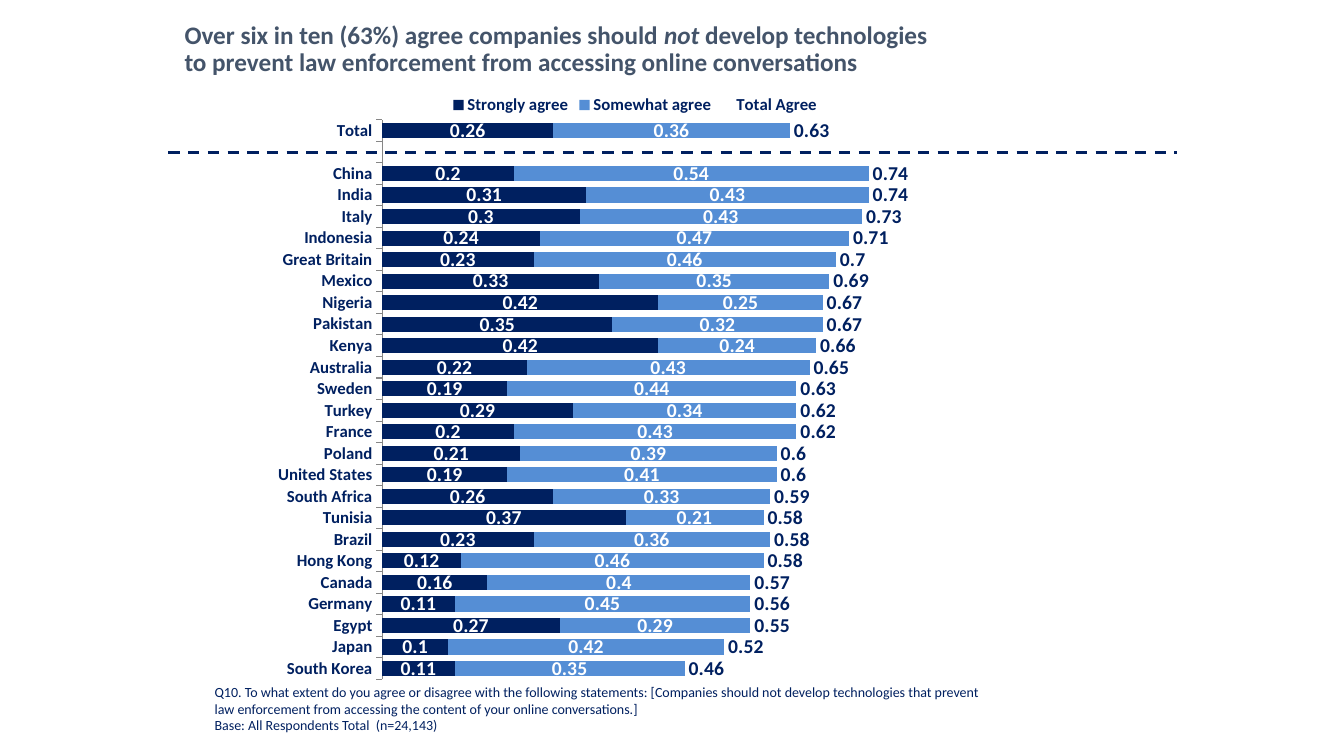
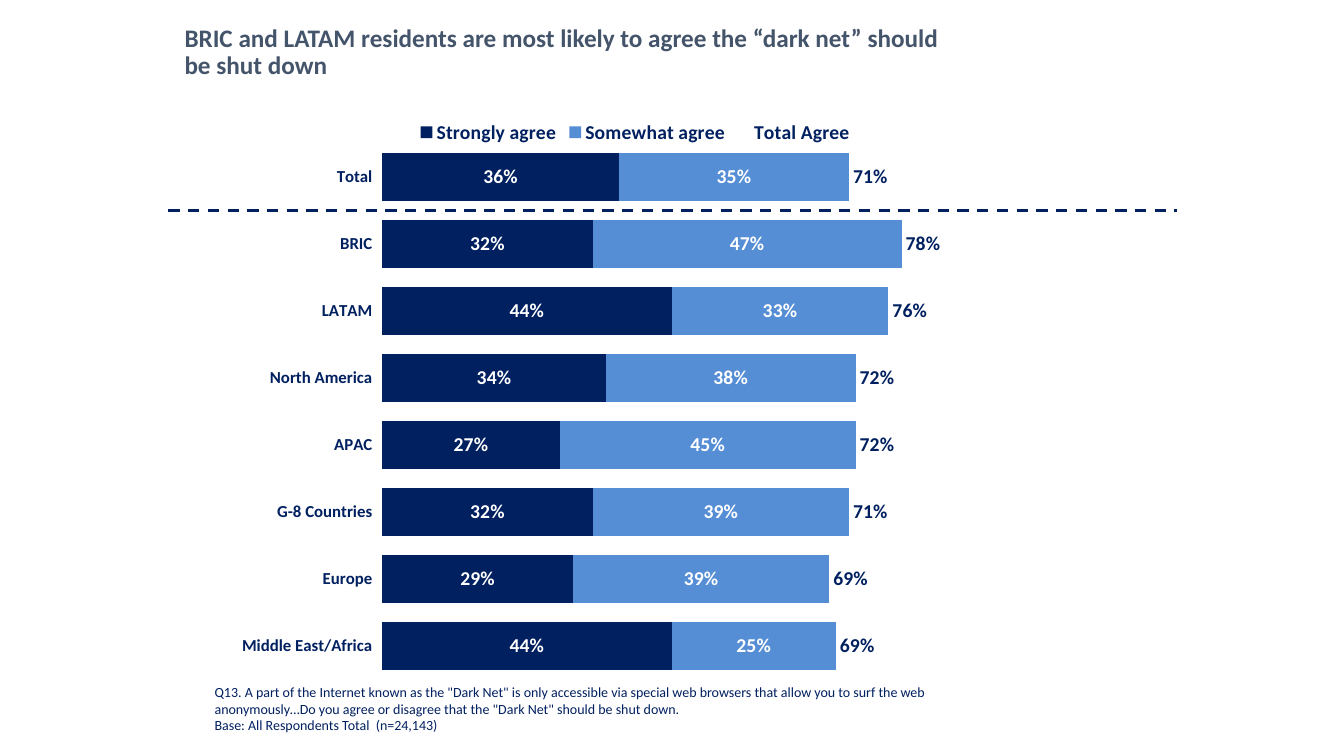
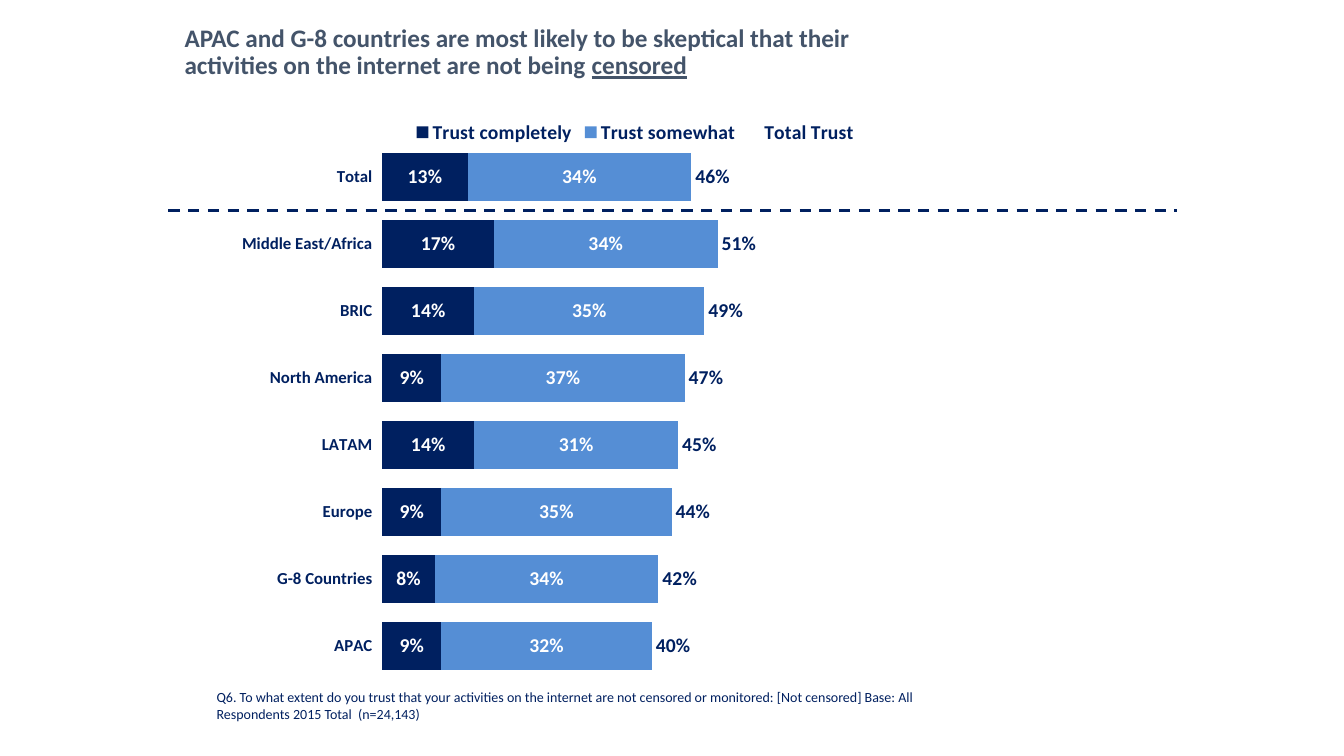
from collections import namedtuple

from lxml.etree import SubElement
from pptx import Presentation
from pptx.chart.data import CategoryChartData
from pptx.dml.color import RGBColor
from pptx.enum.chart import XL_CHART_TYPE, XL_LABEL_POSITION, XL_LEGEND_POSITION
from pptx.enum.dml import MSO_LINE
from pptx.enum.shapes import MSO_CONNECTOR
from pptx.enum.text import MSO_ANCHOR, MSO_AUTO_SIZE, PP_ALIGN
from pptx.oxml import parse_xml
from pptx.oxml.ns import nsdecls, qn
from pptx.util import Pt

Box = namedtuple("Box", "left top width height")

PX = 9144
SLIDE_WIDTH, SLIDE_HEIGHT = 1333, 750
FONT = "Calibri"
NAVY = RGBColor(0x00, 0x20, 0x60)
BLUE = RGBColor(0x55, 0x8E, 0xD5)
SLATE = RGBColor(0x44, 0x54, 0x6A)
GRAY = RGBColor(0x86, 0x86, 0x86)
WHITE = RGBColor(0xFF, 0xFF, 0xFF)
BLACK = RGBColor(0x00, 0x00, 0x00)

PLOT_AREA = {"x": 0.2, "y": 0.06, "w": 0.78, "h": 0.93}
SERIES_STYLES = [
    (NAVY, WHITE, XL_LABEL_POSITION.CENTER),
    (BLUE, WHITE, XL_LABEL_POSITION.CENTER),
    (None, NAVY, XL_LABEL_POSITION.INSIDE_BASE),
]
AGREE = ["Strongly agree", "Somewhat agree", "Total Agree"]
TRUST = ["Trust completely", "Trust somewhat", "Total Trust"]
BASE = "Base: All Respondents Total  (n=24,143)"
NOTE_BOX = Box(203, 673, 779, 61)
TITLE_BOX = Box(183, 25, 750, 55)
REGION_CHART_BOX = Box(212, 108, 836, 572)

COUNTRY_ROWS = [
    ("Total", 0.26, 0.36, 0.63),
    ("", None, None, None),
    ("China", 0.2, 0.54, 0.74),
    ("India", 0.31, 0.43, 0.74),
    ("Italy", 0.3, 0.43, 0.73),
    ("Indonesia", 0.24, 0.47, 0.71),
    ("Great Britain", 0.23, 0.46, 0.7),
    ("Mexico", 0.33, 0.35, 0.69),
    ("Nigeria", 0.42, 0.25, 0.67),
    ("Pakistan", 0.35, 0.32, 0.67),
    ("Kenya", 0.42, 0.24, 0.66),
    ("Australia", 0.22, 0.43, 0.65),
    ("Sweden", 0.19, 0.44, 0.63),
    ("Turkey", 0.29, 0.34, 0.62),
    ("France", 0.2, 0.43, 0.62),
    ("Poland", 0.21, 0.39, 0.6),
    ("United States", 0.19, 0.41, 0.6),
    ("South Africa", 0.26, 0.33, 0.59),
    ("Tunisia", 0.37, 0.21, 0.58),
    ("Brazil", 0.23, 0.36, 0.58),
    ("Hong Kong", 0.12, 0.46, 0.58),
    ("Canada", 0.16, 0.4, 0.57),
    ("Germany", 0.11, 0.45, 0.56),
    ("Egypt", 0.27, 0.29, 0.55),
    ("Japan", 0.1, 0.42, 0.52),
    ("South Korea", 0.11, 0.35, 0.46),
]
DARK_NET_ROWS = [
    ("Total", 0.36, 0.35, 0.71),
    ("BRIC", 0.32, 0.47, 0.78),
    ("LATAM", 0.44, 0.33, 0.76),
    ("North America", 0.34, 0.38, 0.72),
    ("APAC", 0.27, 0.45, 0.72),
    ("G-8 Countries", 0.32, 0.39, 0.71),
    ("Europe", 0.29, 0.39, 0.69),
    ("Middle East/Africa", 0.44, 0.25, 0.69),
]
CENSORSHIP_ROWS = [
    ("Total", 0.13, 0.34, 0.46),
    ("Middle East/Africa", 0.17, 0.34, 0.51),
    ("BRIC", 0.14, 0.35, 0.49),
    ("North America", 0.09, 0.37, 0.47),
    ("LATAM", 0.14, 0.31, 0.45),
    ("Europe", 0.09, 0.35, 0.44),
    ("G-8 Countries", 0.08, 0.34, 0.42),
    ("APAC", 0.09, 0.32, 0.4),
]


def emu(box):
    """Return the four lengths of a pixel box in EMU."""
    return [length * PX for length in box]


def format_font(font, size, color, bold=False, italic=None, underline=None):
    """Apply the deck's typeface with a size, colour and emphasis."""
    font.name = FONT
    font.size = Pt(size)
    font.color.rgb = color
    font.bold = bold
    font.italic = italic
    font.underline = underline


def write_text(paragraph, text, **text_format):
    """Append one formatted run to a paragraph."""
    run = paragraph.add_run()
    run.text = text
    format_font(run.font, **text_format)


def add_title(slide, box, parts):
    """Fill the title placeholder with text parts and their emphasis."""
    title = slide.shapes.title
    title.left, title.top, title.width, title.height = emu(box)
    frame = title.text_frame
    frame.margin_left = frame.margin_right = frame.margin_top = frame.margin_bottom = 0
    frame.vertical_anchor = MSO_ANCHOR.MIDDLE
    frame.word_wrap = True
    frame.auto_size = MSO_AUTO_SIZE.NONE
    paragraph = frame.paragraphs[0]
    paragraph.alignment = PP_ALIGN.LEFT
    paragraph.line_spacing = 0.9
    for text, emphasis in parts:
        write_text(paragraph, text, size=18, color=SLATE, bold=True, **emphasis)


def add_note(slide, box, lines):
    """Write the survey question and base under the chart."""
    frame = slide.shapes.add_textbox(*emu(box)).text_frame
    frame.word_wrap = True
    frame.auto_size = MSO_AUTO_SIZE.SHAPE_TO_FIT_TEXT
    for index, line in enumerate(lines):
        paragraph = frame.add_paragraph() if index else frame.paragraphs[0]
        write_text(paragraph, line, size=10, color=NAVY)


def add_divider(slide, box, row_count, rows_above):
    """Draw the dashed line that parts the total from the rows of a chart box."""
    share = PLOT_AREA["y"] + PLOT_AREA["h"] * rows_above / row_count
    left, top = box.left - 45, box.top + round(box.height * share)
    line = slide.shapes.add_connector(
        MSO_CONNECTOR.STRAIGHT, *emu((left, top, left + 1000, top)))
    line.line.color.rgb = NAVY
    line.line.width = Pt(2)
    line.line.dash_style = MSO_LINE.DASH
    SubElement(line._element.spPr, qn("a:effectLst"))


def set_plot_area(chart):
    """Fix the inner plot area as shares of the chart box."""
    plot_area = chart._chartSpace.chart.plotArea
    for layout in plot_area.findall(qn("c:layout")):
        plot_area.remove(layout)
    modes = "".join(f'<c:{key}Mode val="edge"/>' for key in "xy")
    sizes = "".join(f'<c:{key} val="{share}"/>' for key, share in PLOT_AREA.items())
    plot_area.insert(0, parse_xml(
        f'<c:layout {nsdecls("c")}><c:manualLayout><c:layoutTarget val="inner"/>'
        f"{modes}{sizes}</c:manualLayout></c:layout>"))


def style_series(series, color, label_color, position, number_format):
    """Colour one series and its value labels."""
    if color is None:
        series.format.fill.background()
    else:
        series.format.fill.solid()
        series.format.fill.fore_color.rgb = color
    labels = series.data_labels
    labels.show_value = True
    labels.position = position
    labels.number_format = number_format
    labels.number_format_is_linked = False
    format_font(labels.font, size=14, color=label_color, bold=True)


def add_stacked_chart(slide, box, names, rows, number_format, legend_size, axis_color):
    """Place the stacked bar chart with its legend in a box."""
    categories, *columns = zip(*rows)
    data = CategoryChartData(number_format=number_format)
    data.categories = categories
    for name, values in zip(names, columns):
        data.add_series(name, values)
    chart = slide.shapes.add_chart(XL_CHART_TYPE.BAR_STACKED, *emu(box), data).chart
    format_font(chart.font, size=18, color=BLACK)
    chart.has_title = False
    set_plot_area(chart)

    chart.has_legend = True
    chart.legend.position = XL_LEGEND_POSITION.TOP
    chart.legend.include_in_layout = False
    format_font(chart.legend.font, size=legend_size, color=NAVY, bold=True)

    category_axis = chart.category_axis
    category_axis.reverse_order = True
    format_font(category_axis.tick_labels.font, size=12, color=NAVY, bold=True)
    if axis_color is None:
        category_axis.format.line.fill.background()
    else:
        category_axis.format.line.color.rgb = axis_color

    value_axis = chart.value_axis
    value_axis.minimum_scale, value_axis.maximum_scale = 0, 1
    value_axis.has_major_gridlines = False
    value_axis.visible = False

    plot = chart.plots[0]
    plot.gap_width, plot.overlap = 42, 100
    plot.vary_by_categories = False
    for series, style in zip(plot.series, SERIES_STYLES):
        style_series(series, *style, number_format)


def add_survey_slide(presentation, title, names, rows, note, title_box=TITLE_BOX,
                     chart_box=REGION_CHART_BOX, note_box=NOTE_BOX, rows_above=1,
                     number_format="0%", legend_size=14, axis_color=None):
    """Add a slide with a title, a stacked chart, a divider and a note."""
    slide = presentation.slides.add_slide(presentation.slide_layouts[5])
    add_stacked_chart(slide, chart_box, names, rows, number_format, legend_size, axis_color)
    add_note(slide, note_box, note)
    add_divider(slide, chart_box, len(rows), rows_above)
    add_title(slide, title_box, title)


def main():
    """Build and save the survey deck."""
    presentation = Presentation()
    presentation.slide_width = SLIDE_WIDTH * PX
    presentation.slide_height = SLIDE_HEIGHT * PX
    add_survey_slide(
        presentation,
        [("Over six in ten (63%) agree companies should ", {}),
         ("not", {"italic": True}),
         (" develop technologies to prevent law enforcement from accessing "
          "online conversations", {})],
        AGREE, COUNTRY_ROWS,
        ["Q10. To what extent do you agree or disagree with the following statements: "
         "[Companies should not develop technologies that prevent law enforcement from "
         "accessing the content of your online conversations.]", BASE],
        title_box=Box(183, 22, 750, 55), chart_box=Box(212, 83, 836, 597),
        rows_above=1.5, number_format="General", legend_size=12, axis_color=GRAY)
    add_survey_slide(
        presentation,
        [("BRIC and LATAM residents are most likely to agree the “dark net” should "
          "be shut down", {})],
        AGREE, DARK_NET_ROWS,
        ['Q13. A part of the Internet known as the "Dark Net" is only accessible via '
         "special web browsers that allow you to surf the web anonymously…Do you agree "
         'or disagree that the "Dark Net" should be shut down.', BASE])
    add_survey_slide(
        presentation,
        [("APAC and G-8 countries are most likely to be skeptical that their activities "
          "on the internet are not being ", {}),
         ("censored", {"underline": True})],
        TRUST, CENSORSHIP_ROWS,
        ["Q6. To what extent do you trust that your activities on the internet are not "
         "censored or monitored: [Not censored] Base: All Respondents 2015 Total  "
         "(n=24,143)"],
        note_box=Box(205, 678, 712, 44))
    presentation.save("out.pptx")


if __name__ == "__main__":
    main()
